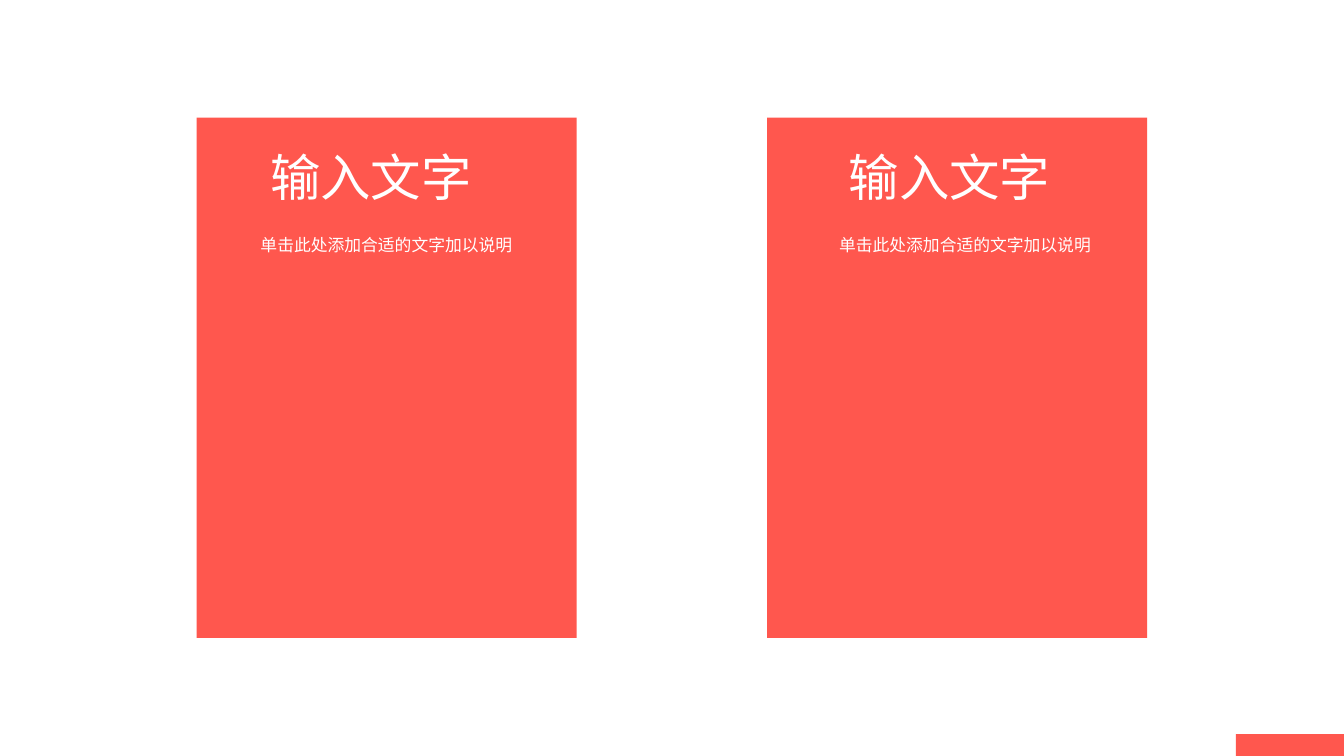
from lxml.etree import SubElement
from pptx import Presentation
from pptx.dml.color import RGBColor
from pptx.enum.shapes import MSO_SHAPE
from pptx.enum.text import MSO_AUTO_SIZE, PP_ALIGN
from pptx.oxml.ns import qn
from pptx.util import Pt

COLORS = {"coral": "FF574E", "white": "FFFFFF"}
FONT = "Noto Sans CJK JP"
HEADING = "输入文字"
CAPTION = "单击此处添加合适的文字加以说明"
CARD_LEFTS = (140.5, 547.9)
TEXT_LEFTS = (172.8, 586.1)


def add_block(page, left, top, width, height):
    block = page.shapes.add_shape(
        MSO_SHAPE.RECTANGLE, Pt(left), Pt(top), Pt(width), Pt(height))
    block.shadow.inherit = False
    block.fill.solid()
    block.fill.fore_color.rgb = RGBColor.from_string(COLORS["coral"])
    block.line.fill.background()


def add_label(page, text, left, top, width, height, size):
    box = page.shapes.add_textbox(Pt(left), Pt(top), Pt(width), Pt(height))
    frame = box.text_frame
    frame.word_wrap = True
    frame.auto_size = MSO_AUTO_SIZE.SHAPE_TO_FIT_TEXT
    frame.text = text
    para = frame.paragraphs[0]
    para.alignment = PP_ALIGN.CENTER
    span = para.runs[0]
    span.font.size = Pt(size)
    span.font.name = FONT
    span.font.color.rgb = RGBColor.from_string(COLORS["white"])
    # Chinese characters take the East Asian typeface
    SubElement(span._r.get_or_add_rPr(), qn("a:ea"), typeface=FONT)


def main():
    deck = Presentation()
    deck.slide_width, deck.slide_height = Pt(960), Pt(540)
    page = deck.slides.add_slide(deck.slide_layouts.get_by_name("Blank"))

    add_block(page, 882.7, 524.4, 77.3, 15.6)
    for card_left, text_left in zip(CARD_LEFTS, TEXT_LEFTS):
        add_block(page, card_left, 84.1, 271.5, 371.5)
        add_label(page, HEADING, text_left + 5.8, 100.8, 172.8, 51, 36)
        add_label(page, CAPTION, text_left, 164.2, 206.6, 21.8, 12)

    deck.save("out.pptx")


if __name__ == "__main__":
    main()
